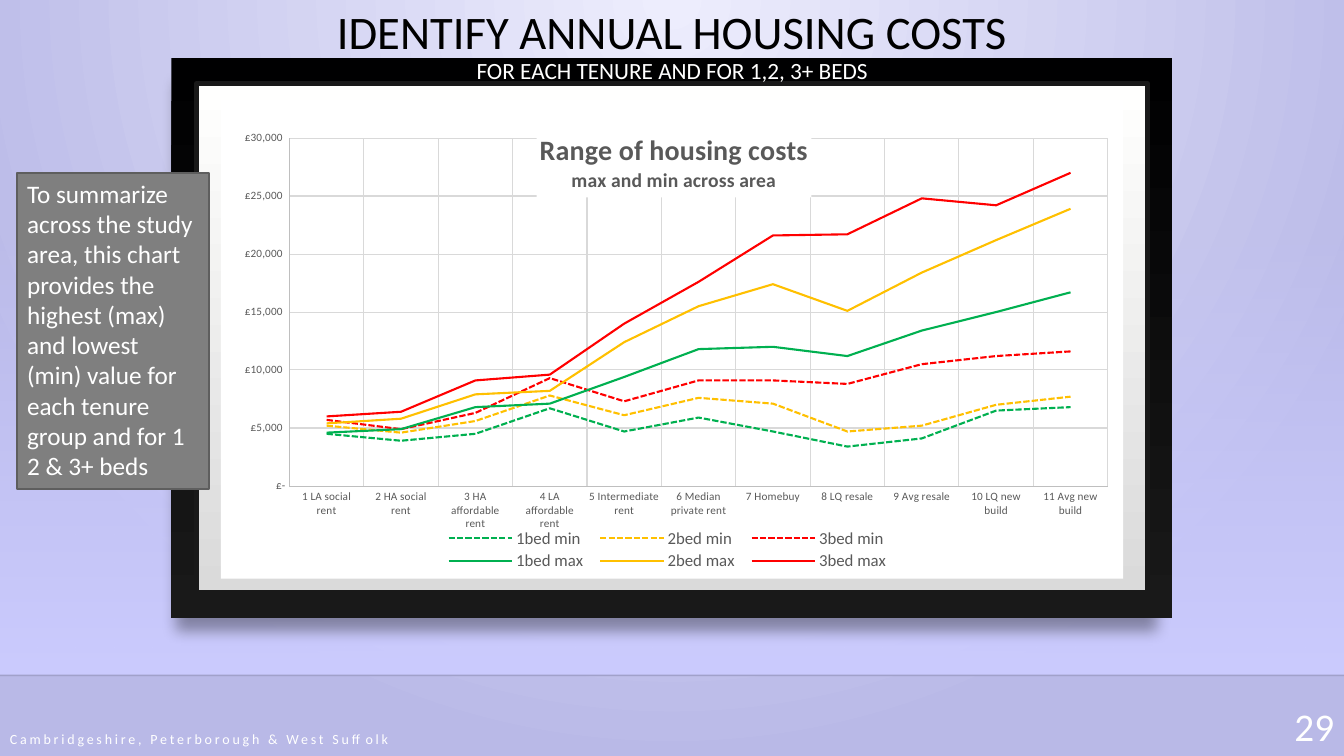
from copy import deepcopy

from pptx import Presentation
from pptx.chart.data import CategoryChartData
from pptx.dml.color import RGBColor
from pptx.enum.chart import XL_CHART_TYPE, XL_LEGEND_POSITION, XL_TICK_MARK
from pptx.enum.dml import MSO_LINE
from pptx.enum.shapes import MSO_CONNECTOR, MSO_SHAPE
from pptx.enum.text import MSO_ANCHOR, PP_ALIGN
from pptx.oxml import parse_xml
from pptx.oxml.ns import nsdecls, qn
from pptx.util import Inches, Pt

RECTANGLE = MSO_SHAPE.RECTANGLE
STRAIGHT = MSO_CONNECTOR.STRAIGHT
LINE_CHART = XL_CHART_TYPE.LINE
LEGEND_BOTTOM = XL_LEGEND_POSITION.BOTTOM
NO_TICK = XL_TICK_MARK.NONE
SOLID, DASHED = MSO_LINE.SOLID, MSO_LINE.SQUARE_DOT
MIDDLE, TOP = MSO_ANCHOR.MIDDLE, MSO_ANCHOR.TOP
LEFT, CENTER, RIGHT = PP_ALIGN.LEFT, PP_ALIGN.CENTER, PP_ALIGN.RIGHT

WIDTH, HEIGHT = Inches(13.33), Inches(7.5)
FONT = "Calibri"
COLORS = {
    "white": "FFFFFF", "black": "000000", "ink": "000001",
    "sky": "EDEDFD", "dusk": "B9B9E7", "lilac": "CCCCFF",
    "frame": "191919", "mat": "DADADA", "mat light": "FFFFFE",
    "panel": "7F7F7F", "panel edge": "5E5E5E",
    "label": "595959", "axis": "BFBFBF", "grid": "D9D9D9",
    "1bed": "00B050", "2bed": "FFC000", "3bed": "FF0000",
}
TENURES = [
    "1 LA social rent", "2 HA social rent", "3 HA affordable rent",
    "4 LA affordable rent", "5 Intermediate rent", "6 Median private rent",
    "7 Homebuy", "8 LQ resale", "9 Avg resale", "10 LQ new build",
    "11 Avg new build",
]
COSTS = {
    "1bed min": [4500, 3900, 4500, 6700, 4700, 5900, 4700, 3400, 4100, 6500, 6800],
    "2bed min": [5200, 4600, 5600, 7800, 6100, 7600, 7100, 4700, 5200, 7000, 7700],
    "3bed min": [5700, 4900, 6300, 9300, 7300, 9100, 9100, 8800, 10500, 11200, 11600],
    "1bed max": [4600, 4900, 6800, 7100, 9400, 11800, 12000, 11200, 13400, 15000, 16700],
    "2bed max": [5400, 5800, 7900, 8200, 12400, 15500, 17400, 15100, 18400, 21200, 23900],
    "3bed max": [6000, 6400, 9100, 9600, 14000, 17600, 21600, 21700, 24800, 24200, 27000],
}
POUNDS = r'_-"£"* #,##0_-;\-"£"* #,##0_-;_-"£"* "-"'
SUMMARY = ("To summarize across the study area, this chart provides the highest "
           "(max) and lowest (min) value for each tenure group and for 1 2 & 3+ beds")


def rgb(color):
    return RGBColor.from_string(COLORS[color])


def area(left, top, width, height):
    """Turn percentages of the slide into lengths."""
    return (int(WIDTH * left / 100), int(HEIGHT * top / 100),
            int(WIDTH * width / 100), int(HEIGHT * height / 100))


def style_font(font, size, color):
    font.name, font.size = FONT, Pt(size)
    font.color.rgb = rgb(color)


def write(paragraph, text, size, color="white", align=LEFT, tracking=None):
    run = paragraph.add_run()
    run.text = text
    paragraph.alignment = align
    style_font(run.font, size, color)
    if tracking:
        run.font._element.set("spc", str(tracking * 100))
    return run


def style_line(line, color, width, dash=SOLID):
    line.color.rgb = rgb(color)
    line.width = Pt(width)
    line.dash_style = dash


def paint_gradient(fill, owner, start, end, direction, start_alpha=100):
    """Swap the solid fill inside owner for a two-stop gradient."""
    fill.solid()
    fill.fore_color.rgb = rgb(start)
    solid = owner.find(qn("a:solidFill"))
    solid.getparent().replace(solid, parse_xml(
        f'<a:gradFill {nsdecls("a")} rotWithShape="1"><a:gsLst>'
        f'<a:gs pos="0"><a:srgbClr val="{COLORS[start]}">'
        f'<a:alpha val="{start_alpha * 1000}"/></a:srgbClr></a:gs>'
        f'<a:gs pos="100000"><a:srgbClr val="{COLORS[end]}"/></a:gs>'
        f'</a:gsLst>{direction}</a:gradFill>'))


def add_block(slide, place):
    block = slide.shapes.add_shape(RECTANGLE, *area(*place))
    block.shadow.inherit = False
    block.line.fill.background()
    return block


def add_gradient_block(slide, place, start, end, angle, start_alpha=100):
    block = add_block(slide, place)
    paint_gradient(block.fill, block.element.spPr, start, end,
                   f'<a:lin ang="{angle * 60000}" scaled="0"/>', start_alpha)
    return block


def add_label(slide, place, text, size, anchor=TOP, **style):
    frame = slide.shapes.add_textbox(*area(*place)).text_frame
    frame.word_wrap = True
    frame.vertical_anchor = anchor
    write(frame.paragraphs[0], text, size, **style)


def add_backdrop(slide):
    fill = slide.background.fill
    fill.solid()
    paint_gradient(fill, slide.element.find(".//" + qn("p:bgPr")), "sky", "dusk",
                   '<a:path path="circle"><a:fillToRect l="43000" r="43000" '
                   'b="100000"/></a:path>')
    add_gradient_block(slide, (0, 29.47, 100, 59.87), "lilac", "lilac", 90, 0)
    horizon_y = int(HEIGHT * 0.8933)
    horizon = slide.shapes.add_connector(STRAIGHT, 0, horizon_y, WIDTH, horizon_y)
    style_line(horizon.line, "ink", 1)
    horizon.element.find(".//" + qn("a:srgbClr")).append(
        parse_xml(f'<a:alpha {nsdecls("a")} val="20000"/>'))
    horizon.element.spPr.append(parse_xml(f'<a:effectLst {nsdecls("a")}/>'))


def add_frame(slide):
    frame = add_gradient_block(slide, (12.75, 7.73, 74.49, 74), "ink", "frame", 90)
    frame.element.spPr.find(qn("a:effectLst")).append(parse_xml(
        f'<a:outerShdw {nsdecls("a")} blurRad="{Pt(10)}" dist="{Pt(18)}" '
        'dir="4740000" sx="98000" sy="98000" algn="tl" rotWithShape="0">'
        f'<a:srgbClr val="{COLORS["black"]}"><a:alpha val="34000"/></a:srgbClr>'
        '</a:outerShdw>'))
    mat = add_gradient_block(slide, (14.63, 11.07, 70.74, 67.33), "mat", "mat light", 270)
    style_line(mat.line, "frame", 4)


def chart_layout(x, y, width=None, height=None, target=""):
    """Build a manual layout from shares of the chart's size."""
    modes = '<c:xMode val="edge"/><c:yMode val="edge"/>'
    sizes = f'<c:w val="{width}"/><c:h val="{height}"/>' if width else ""
    return parse_xml(f'<c:layout {nsdecls("c")}><c:manualLayout>{target}{modes}'
                     f'<c:x val="{x}"/><c:y val="{y}"/>{sizes}'
                     '</c:manualLayout></c:layout>')


def set_layout(parent, before, layout):
    """Put layout ahead of the child tagged before, replacing an earlier one."""
    for earlier in parent.findall(qn("c:layout")):
        parent.remove(earlier)
    parent.find(qn(before)).addprevious(layout)


def style_axis(axis):
    axis.major_tick_mark = axis.minor_tick_mark = NO_TICK
    axis.has_major_gridlines = True
    style_line(axis.major_gridlines.format.line, "grid", 0.75)
    style_line(axis.format.line, "axis", 0.75)
    style_font(axis.tick_labels.font, 8, "label")


def add_cost_chart(slide):
    data = CategoryChartData()
    data.categories = TENURES
    for name, costs in COSTS.items():
        data.add_series(name, costs)
    chart = slide.shapes.add_chart(
        LINE_CHART, *area(16.43, 13.2, 67.14, 63.33), data).chart
    style_font(chart.font, 10, "black")
    chart._chartSpace.find(qn("c:txPr")).addprevious(parse_xml(
        f'<c:spPr {nsdecls("c", "a")}><a:solidFill><a:srgbClr '
        f'val="{COLORS["white"]}"/></a:solidFill><a:ln><a:noFill/></a:ln></c:spPr>'))
    chart.plots[0].vary_by_categories = False
    for series in chart.plots[0].series:
        beds, bound = series.name.split()
        series.smooth = False
        style_line(series.format.line, beds, 1.5, DASHED if bound == "min" else SOLID)

    for axis in (chart.category_axis, chart.value_axis):
        style_axis(axis)
    chart.value_axis.minimum_scale = 0
    chart.value_axis.maximum_scale = 30000
    chart.value_axis.major_unit = 5000
    chart.value_axis.tick_labels.number_format = POUNDS
    chart.value_axis.tick_labels.number_format_is_linked = False

    title = chart.chart_title
    heading = title.text_frame
    write(heading.paragraphs[0], "Range of housing costs", 20, "label", CENTER)
    write(heading.add_paragraph(), "max and min across area", 14, "label", CENTER)
    title.format.fill.solid()
    title.format.fill.fore_color.rgb = rgb("white")
    title._element.find(qn("c:overlay")).set("val", "1")
    set_layout(title._element, "c:overlay", chart_layout(0.35, 0.06))

    chart.has_legend = True
    chart.legend.position = LEGEND_BOTTOM
    chart.legend.include_in_layout = False
    style_font(chart.legend.font, 12, "label")
    set_layout(chart.legend._element, "c:overlay", chart_layout(0.24, 0.89, 0.51, 0.1))
    set_layout(chart._chartSpace.chart.plotArea, "c:lineChart", chart_layout(
        0.076, 0.08, 0.907, 0.727, '<c:layoutTarget val="inner"/>'))


def add_summary(slide):
    panel = add_block(slide, (1.28, 22.93, 14.25, 41.73))
    panel.fill.solid()
    panel.fill.fore_color.rgb = rgb("panel")
    style_line(panel.line, "panel edge", 1.25)
    panel.text_frame.word_wrap = True
    panel.text_frame.vertical_anchor = TOP
    write(panel.text_frame.paragraphs[0], SUMMARY, 18)


def add_title(slide):
    title = slide.shapes.title
    title.left, title.top, title.width, title.height = area(5.25, 0.27, 89.5, 11.87)
    title.text_frame.vertical_anchor = MIDDLE
    paragraph = title.text_frame.paragraphs[0]
    paragraph.line_spacing = 0.9
    topic = write(paragraph, "IDENTIFY ANNUAL HOUSING COSTS", 33.3, "black", CENTER)
    paragraph.add_line_break()
    paragraph._p.find(qn("a:br")).append(deepcopy(topic.font._element))
    write(paragraph, "FOR EACH TENURE AND FOR 1,2, 3+ BEDS", 16.6, align=CENTER)
    slide.shapes._spTree.append(title.element)


def main():
    deck = Presentation()
    deck.slide_width, deck.slide_height = WIDTH, HEIGHT
    slide = deck.slides.add_slide(deck.slide_layouts.get_by_name("Title Only"))
    add_backdrop(slide)
    add_frame(slide)
    add_cost_chart(slide)
    add_label(slide, (0, 95.47, 40.81, 4.53),
              "Cambridgeshire, Peterborough & West Suffolk", 10, MIDDLE, tracking=2)
    add_label(slide, (93.4, 92.27, 6.6, 7.33), "29", 28, align=RIGHT)
    add_summary(slide)
    add_title(slide)
    deck.save("out.pptx")


if __name__ == "__main__":
    main()
